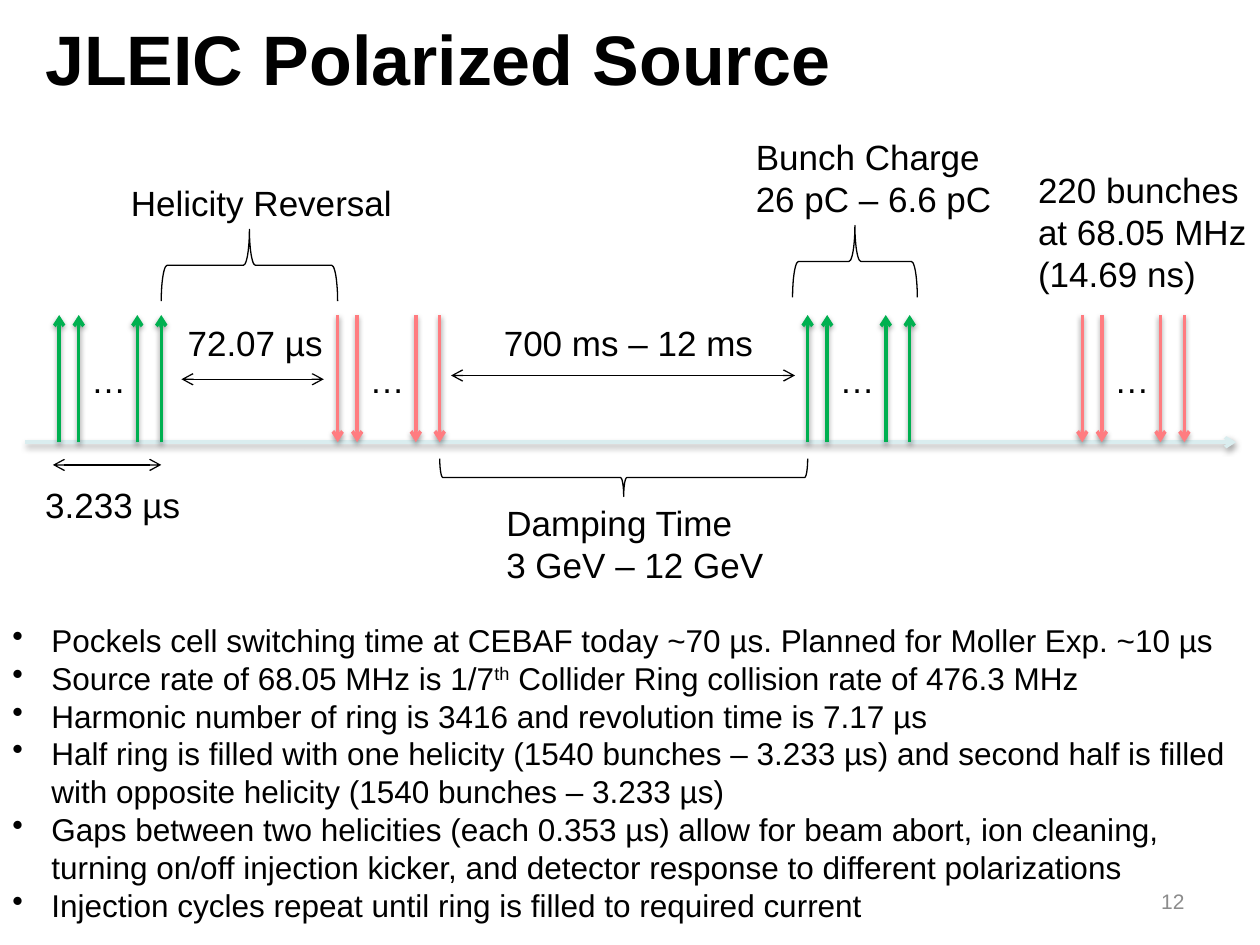
from dataclasses import dataclass

from lxml.etree import SubElement
from pptx import Presentation
from pptx.dml.color import RGBColor
from pptx.enum.shapes import MSO_CONNECTOR, MSO_SHAPE
from pptx.enum.text import MSO_ANCHOR, PP_ALIGN
from pptx.oxml.ns import qn
from pptx.util import Inches, Pt

COLORS = {
    "text": "000000",
    "number": "8C8C8C",
    "axis": "DAEDEF",
    "positive": "00B050",
    "negative": "FF7C80",
}
FONT = "Arial"
AXIS_Y, BUNCH_TOP = 3.51, 2.5
BUNCH_OFFSETS = (0, 0.155, 0.62, 0.81)


@dataclass
class Train:
    x: float
    helicity: str


@dataclass
class Span:
    x1: float
    x2: float
    y: float


@dataclass
class Brace:
    x1: float
    x2: float
    y: float
    depth: float
    points_up: bool


@dataclass
class Label:
    x: float
    y: float
    w: float
    h: float
    lines: tuple[str, ...]
    wrap: bool = True


TRAINS = [
    Train(0.47, "positive"),
    Train(6.41, "positive"),
    Train(2.68, "negative"),
    Train(8.59, "negative"),
]
SPANS = [Span(1.44, 2.57, 3.01), Span(3.58, 6.31, 2.98), Span(0.42, 1.28, 3.69)]
BRACES = [
    Brace(3.49, 6.41, 3.64, 0.3, False),
    Brace(1.28, 2.68, 1.82, 0.57, True),
    Brace(6.29, 7.28, 1.79, 0.57, True),
]
LABELS = [
    Label(0.94, 1.39, 2.29, 0.44, ("Helicity Reversal",)),
    Label(1.39, 2.5, 1.28, 0.44, ("72.07 µs",)),
    Label(3.92, 3.93, 2.26, 0.77, ("Damping Time", "3 GeV – 12 GeV")),
    Label(3.9, 2.5, 2.19, 0.44, ("700 ms – 12 ms",)),
    Label(0.26, 3.79, 1.28, 0.44, ("3.233 µs",)),
    Label(5.9, 1.03, 2.16, 0.77, ("Bunch Charge", "26 pC – 6.6 pC")),
    Label(8.14, 1.29, 1.87, 1.11, ("220 bunches", "at 68.05 MHz", "(14.69 ns)")),
]
NOTES = [
    ("Pockels cell switching time at CEBAF today ~70 µs. Planned for Moller Exp. ~10 µs",),
    ("Source rate of 68.05 MHz is 1/7", "th", " Collider Ring collision rate of 476.3 MHz"),
    ("Harmonic number of ring is 3416 and revolution time is 7.17 µs",),
    ("Half ring is filled with one helicity (1540 bunches – 3.233 µs) and second half "
     "is filled with opposite helicity (1540 bunches – 3.233 µs)",),
    ("Gaps between two helicities (each 0.353 µs) allow for beam abort, ion cleaning, "
     "turning on/off injection kicker, and detector response to different polarizations",),
    ("Injection cycles repeat until ring is filled to required current",),
]


def rgb(name: str) -> RGBColor:
    return RGBColor.from_string(COLORS[name])


def set_font(p, size: float, color: str = "text", bold: bool = False) -> None:
    p.font.name = FONT
    p.font.size = Pt(size)
    p.font.bold = bold
    p.font.color.rgb = rgb(color)


def add_line(s, x1: float, y1: float, x2: float, y2: float, color: str,
             width: float, both_ends: bool = False, shadow: bool = False) -> None:
    line = s.shapes.add_connector(
        MSO_CONNECTOR.STRAIGHT, Inches(x1), Inches(y1), Inches(x2), Inches(y2))
    line.line.color.rgb = rgb(color)
    line.line.width = Pt(width)
    ln = line.line._get_or_add_ln()
    for end in ("a:headEnd", "a:tailEnd") if both_ends else ("a:tailEnd",):
        SubElement(ln, qn(end), type="arrow")
    effects = SubElement(line._element.spPr, qn("a:effectLst"))
    if shadow:
        outer = SubElement(effects, qn("a:outerShdw"), blurRad=str(Pt(3.1)),
                           dist=str(Pt(1.6)), dir="5400000", rotWithShape="0")
        clr = SubElement(outer, qn("a:srgbClr"), val=COLORS["text"])
        SubElement(clr, qn("a:alpha"), val="38000")


def add_box(s, x: float, y: float, w: float, h: float, wrap: bool = True):
    tf = s.shapes.add_textbox(Inches(x), Inches(y), Inches(w), Inches(h)).text_frame
    tf.word_wrap = wrap
    return tf


def add_label(s, label: Label) -> None:
    tf = add_box(s, label.x, label.y, label.w, label.h, label.wrap)
    tf.text = "\n".join(label.lines)
    for p in tf.paragraphs:
        set_font(p, 20)


def add_train(s, train: Train) -> None:
    ends = (AXIS_Y, BUNCH_TOP) if train.helicity == "positive" else (BUNCH_TOP, AXIS_Y)
    for offset in BUNCH_OFFSETS:
        x = train.x + offset
        add_line(s, x, ends[0], x, ends[1], train.helicity, 2, shadow=True)
    add_label(s, Label(train.x + BUNCH_OFFSETS[1], 2.8, 0.48, 0.44, ("…",), wrap=False))


def add_brace(s, brace: Brace) -> None:
    length = brace.x2 - brace.x1
    left = (brace.x1 + brace.x2 - brace.depth) / 2
    top = brace.y + (brace.depth - length) / 2
    kind = MSO_SHAPE.RIGHT_BRACE if brace.points_up else MSO_SHAPE.LEFT_BRACE
    sp = s.shapes.add_shape(
        kind, Inches(left), Inches(top), Inches(brace.depth), Inches(length))
    sp.rotation = 270
    sp.shadow.inherit = False
    sp.fill.background()
    sp.line.color.rgb = rgb("text")
    sp.line.width = Pt(0.75)


def add_notes(s) -> None:
    tf = add_box(s, 0, 4.88, 10.01, 2.52)
    for i, parts in enumerate(NOTES):
        p = tf.paragraphs[0] if i == 0 else tf.add_paragraph()
        set_font(p, 18)
        pPr = p._p.get_or_add_pPr()
        pPr.set("marL", str(Inches(0.31)))
        pPr.set("indent", str(-Inches(0.31)))
        bullet = pPr.makeelement(qn("a:buChar"), {"char": "•"})
        pPr.insert(0, bullet)
        for part in parts:
            r = p.add_run()
            r.text = part
            if part == "th":
                r.font._element.set("baseline", "30000")


def add_title(s) -> None:
    title = s.shapes.title
    title.left, title.top = Inches(0.26), Inches(0)
    title.width, title.height = Inches(9.48), Inches(0.92)
    tf = title.text_frame
    tf.text = "JLEIC Polarized Source"
    tf.vertical_anchor = MSO_ANCHOR.MIDDLE
    tf.paragraphs[0].alignment = PP_ALIGN.LEFT
    set_font(tf.paragraphs[0], 40, bold=True)


def add_slide_number(s) -> None:
    tf = add_box(s, 7.17, 6.95, 2.33, 0.4)
    tf.text = "12"
    tf.vertical_anchor = MSO_ANCHOR.MIDDLE
    tf.paragraphs[0].alignment = PP_ALIGN.RIGHT
    set_font(tf.paragraphs[0], 12, "number")


def main() -> None:
    prs = Presentation()
    prs.slide_width, prs.slide_height = Inches(10), Inches(7.5)
    s = prs.slides.add_slide(prs.slide_layouts[5])
    add_title(s)
    add_line(s, 0.2, AXIS_Y, 9.81, AXIS_Y, "axis", 2, shadow=True)
    for train in TRAINS:
        add_train(s, train)
    for span in SPANS:
        add_line(s, span.x1, span.y, span.x2, span.y, "text", 0.75, both_ends=True)
    for brace in BRACES:
        add_brace(s, brace)
    for label in LABELS:
        add_label(s, label)
    add_slide_number(s)
    add_notes(s)
    prs.save("out.pptx")


if __name__ == "__main__":
    main()
